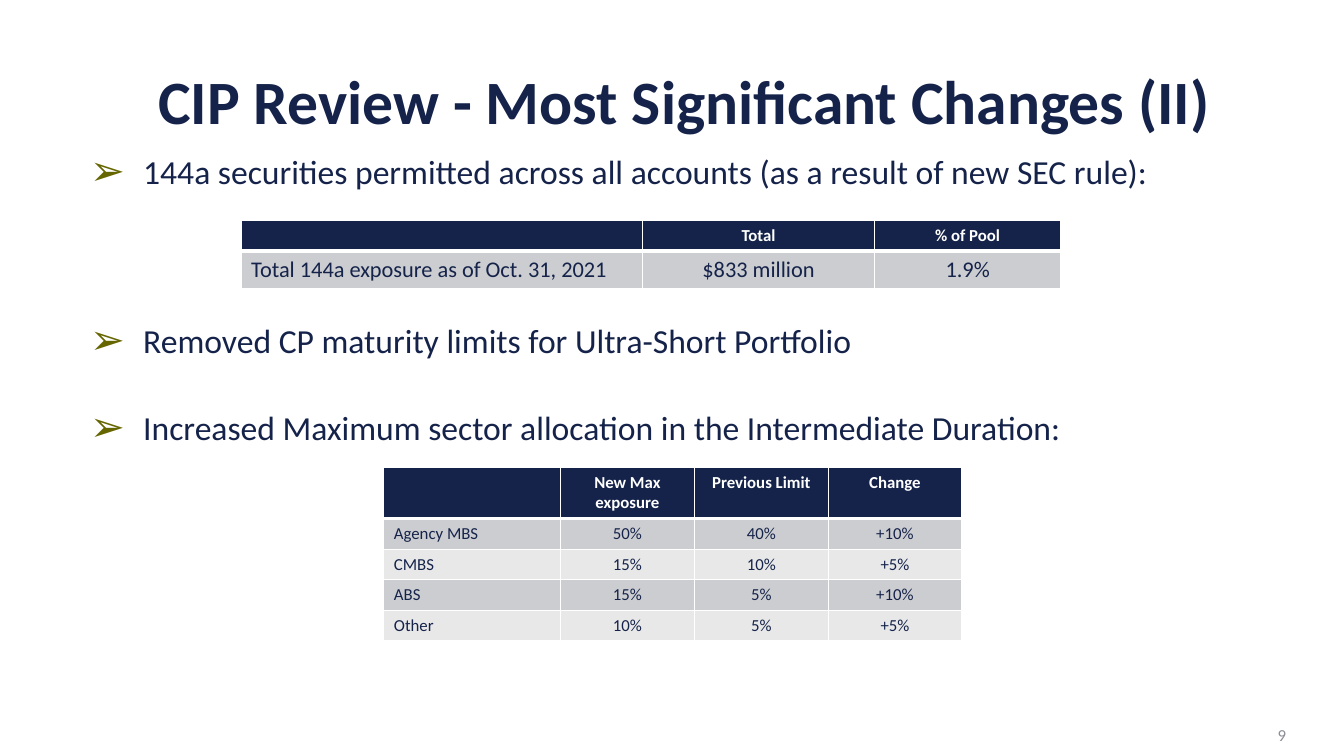
import lxml.etree
import pptx
import pptx.dml.color
import pptx.enum.text
import pptx.oxml.ns
import pptx.util

NAVY = pptx.dml.color.RGBColor(0x15, 0x23, 0x4A)
OLIVE = pptx.dml.color.RGBColor(0x66, 0x66, 0x00)
WHITE = pptx.dml.color.RGBColor(0xFF, 0xFF, 0xFF)
GREY = pptx.dml.color.RGBColor(0x8C, 0x8D, 0x96)
BANDS = (pptx.dml.color.RGBColor(0xCC, 0xCD, 0xD0),
         pptx.dml.color.RGBColor(0xE8, 0xE8, 0xE9))

ALIGN = pptx.enum.text.PP_ALIGN
ANCHOR = pptx.enum.text.MSO_ANCHOR
COMPARISON_LAYOUT = 4
COLUMNS, ROWS = 160, 90


def add_xml(parent, tag, **attributes):
    return lxml.etree.SubElement(parent, pptx.oxml.ns.qn(tag), attributes)


class Deck:
    """Holds the style and the current slide; lengths are grid columns and rows."""

    font_name = "Calibri"

    def __init__(self):
        self.presentation = pptx.Presentation()
        self.presentation.slide_width = pptx.util.Inches(13.333)
        self.presentation.slide_height = pptx.util.Inches(7.5)
        layout = self.presentation.slide_layouts[COMPARISON_LAYOUT]
        self.slide = self.presentation.slides.add_slide(layout)
        self.bodies = [holder for holder in self.slide.placeholders
                       if holder.placeholder_format.idx > 0]

    def x(self, columns):
        return round(self.presentation.slide_width * columns / COLUMNS)

    def y(self, rows):
        return round(self.presentation.slide_height * rows / ROWS)

    def box(self, left, top, width, height):
        return self.x(left), self.y(top), self.x(width), self.y(height)

    def place(self, holder, *area):
        for side, length in zip(("left", "top", "width", "height"), self.box(*area)):
            setattr(holder, side, length)

    def set_text(self, frame, text, size, color, bold=False, anchor=ANCHOR.MIDDLE, **layout):
        frame.word_wrap = True
        frame.vertical_anchor = anchor
        paragraph = frame.paragraphs[0]
        for name, value in layout.items():
            setattr(paragraph, name, value)
        if not text:
            add_xml(paragraph._p, "a:endParaRPr", sz=str(size * 100))
            return
        run = paragraph.add_run()
        run.text = text
        font_format = {"name": self.font_name, "size": pptx.util.Pt(size), "bold": bold}
        for name, value in font_format.items():
            setattr(run.font, name, value)
        run.font.color.rgb = color

    def title(self, text, *area):
        heading = self.slide.shapes.title
        self.place(heading, *area)
        self.set_text(heading.text_frame, text, 44, NAVY, bold=True,
                      alignment=ALIGN.CENTER, line_spacing=0.9)

    def bullet(self, text, *area):
        body = self.bodies.pop(0)
        self.place(body, *area)
        body.text_frame.auto_size = pptx.enum.text.MSO_AUTO_SIZE.NONE
        properties = body.text_frame.paragraphs[0]._p.get_or_add_pPr()
        indent = self.x(6.35)
        properties.set("marL", str(indent))
        properties.set("indent", str(-indent))
        add_xml(add_xml(properties, "a:buClr"), "a:srgbClr", val=str(OLIVE))
        add_xml(properties, "a:buSzPct", val="125000")
        add_xml(properties, "a:buChar", char="➢")
        self.set_text(body.text_frame, text, 24, NAVY, anchor=ANCHOR.TOP,
                      alignment=ALIGN.LEFT, space_before=pptx.util.Pt(0))

    def page_number(self, text, *area):
        footer = self.slide.shapes.add_textbox(*self.box(*area))
        self.set_text(footer.text_frame, text, 12, GREY, alignment=ALIGN.RIGHT)

    def borders(self, cell, **widths):
        properties = cell._tc.get_or_add_tcPr()
        for side in "LRTB":
            width = pptx.util.Pt(widths.get(side, 1))
            line = add_xml(properties, f"a:ln{side}", w=str(width))
            add_xml(add_xml(line, "a:solidFill"), "a:srgbClr", val=str(WHITE))

    def table(self, left, top, widths, heights, records, body_size):
        area = self.box(left, top, sum(widths), sum(heights))
        grid = self.slide.shapes.add_table(len(heights), len(widths), *area).table
        for column, width in zip(grid.columns, widths):
            column.width = self.x(width)
        for row, height in zip(grid.rows, heights):
            row.height = self.y(height)
        for r, record in enumerate(records):
            header = r == 0
            for c, text in enumerate(record):
                cell = grid.cell(r, c)
                # The rule under the header is heavier than the others
                self.borders(cell, T=3 if r == 1 else 1, B=3 if header else 1)
                cell.fill.solid()
                cell.fill.fore_color.rgb = NAVY if header else BANDS[(r - 1) % 2]
                self.set_text(cell.text_frame, text, 12 if header else body_size,
                              WHITE if header else NAVY, bold=header, anchor=ANCHOR.TOP,
                              alignment=ALIGN.CENTER if header or c else ALIGN.LEFT)

    def finish(self):
        for unused in self.bodies:
            unused._element.getparent().remove(unused._element)
        self.presentation.save("out.pptx")


def main():
    deck = Deck()

    # Title and main points
    deck.title("CIP Review - Most Significant Changes (II)", 17.5, 8, 128, 9)
    changes = {
        17.4: "144a securities permitted across all accounts (as a result of new SEC rule):",
        37.5: "Removed CP maturity limits for Ultra-Short Portfolio",
        47.8: "Increased Maximum sector allocation in the Intermediate Duration:",
    }
    for top, change in changes.items():
        deck.bullet(change, 9.5, top, 141, 6)

    # Sector limits
    deck.table(45.7, 55.65, (21, 16, 15.9, 15.9), (6, 3.6, 3.6, 3.6, 3.6), (
        ("", "New Max exposure", "Previous Limit", "Change"),
        ("Agency MBS", "50%", "40%", "+10%"),
        ("CMBS", "15%", "10%", "+5%"),
        ("ABS", "15%", "5%", "+10%"),
        ("Other", "10%", "5%", "+5%"),
    ), body_size=12)

    # 144a exposure
    deck.table(28.7, 26.2, (47.8, 27.6, 22.2), (3.6, 4.4), (
        ("", "Total", "% of Pool"),
        ("Total 144a exposure as of Oct. 31, 2021", "$833 million", "1.9%"),
    ), body_size=16)

    # Page number
    deck.page_number("9", 118.3, 85.1, 36, 4.8)
    deck.finish()


if __name__ == "__main__":
    main()
